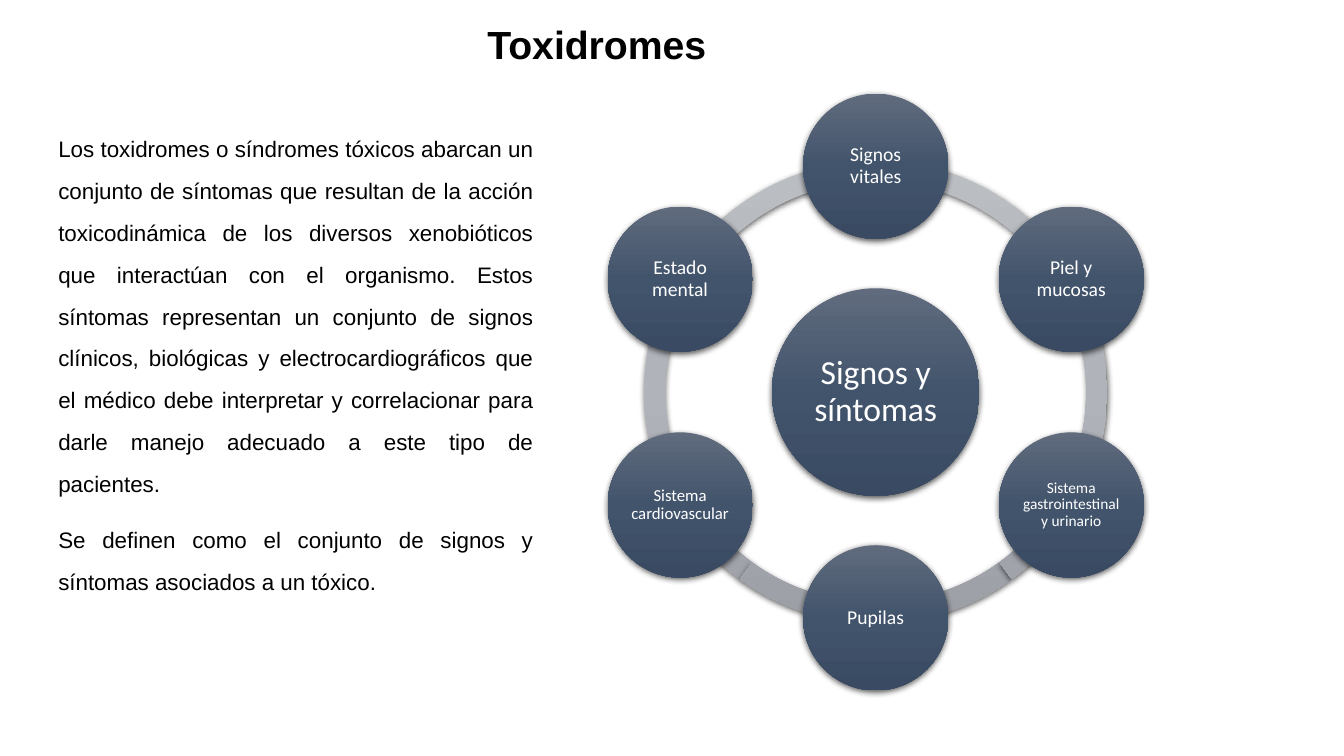
from math import cos, radians, sin

from lxml import etree
from pptx import Presentation
from pptx.dml.color import RGBColor
from pptx.enum.shapes import MSO_SHAPE
from pptx.enum.text import MSO_ANCHOR, PP_ALIGN
from pptx.oxml import parse_xml
from pptx.oxml.ns import nsdecls, qn
from pptx.util import Cm, Pt

CIRCLE, ARC = MSO_SHAPE.OVAL, MSO_SHAPE.BLOCK_ARC
CENTER, JUSTIFY = PP_ALIGN.CENTER, PP_ALIGN.JUSTIFY
TOP, MIDDLE = MSO_ANCHOR.TOP, MSO_ANCHOR.MIDDLE

TITLE = "Toxidromes"
BODY = [
    "Los toxidromes o síndromes tóxicos abarcan un conjunto de síntomas que "
    "resultan de la acción toxicodinámica de los diversos xenobióticos que "
    "interactúan con el organismo. Estos síntomas representan un conjunto de "
    "signos clínicos, biológicas y electrocardiográficos que el médico debe "
    "interpretar y correlacionar para darle manejo adecuado a este tipo de "
    "pacientes.",
    "Se definen como el conjunto de signos y síntomas asociados a un tóxico.",
]
HUB = ("Signos y síntomas", 24)
SIGNS = [  # clockwise from the top: label, text size
    ("Signos vitales", 14),
    ("Piel y mucosas", 14),
    ("Sistema gastrointestinal y urinario", 11),
    ("Pupilas", 14),
    ("Sistema cardiovascular", 12),
    ("Estado mental", 14),
]
ARCS = [(126, 162), (90, 126), (54, 90), (18, 54), (198, 18), (162, 198)]

RING_COLORS = ["BABDC2", "B0B3BA", "9C9FA6"]
CIRCLE_COLORS = ["606B7D", "42546C", "394A62"]
BLACK, WHITE = "000000", "FFFFFF"

# Centimetres
CENTER_X, CENTER_Y, ORBIT = 22.07, 9.88, 5.69
RING_SIZE, HUB_SIZE, SIGN_SIZE = 11.66, 5.23, 3.66
RING_THICKNESS = 0.045

TITLE_FONT = {"name": "Arial", "size": Pt(28), "bold": True}
BODY_FONT = {"name": "Arial", "size": Pt(16)}


def color(value):
    return RGBColor.from_string(value)


def write(shape, texts, font, font_color, align, anchor, spacing, gap=0):
    frame = shape.text_frame
    frame.word_wrap = True
    frame.vertical_anchor = anchor
    for index, text in enumerate(texts):
        para = frame.paragraphs[0] if index == 0 else frame.add_paragraph()
        para.alignment = align
        para.line_spacing = spacing
        para.space_before = Pt(gap if index else 0)
        span = para.add_run()
        span.text = text
        for name, value in font.items():
            setattr(span.font, name, value)
        span.font.color.rgb = color(font_color)


def add_text(page, bounds, *content):
    box = page.shapes.add_textbox(*map(Cm, bounds))
    write(box, *content)


def add_shaded(page, kind, x, y, size, colors):
    """Add a shape centred on x, y with a vertical gradient and a soft shadow."""
    shape = page.shapes.add_shape(
        kind, Cm(x - size / 2), Cm(y - size / 2), Cm(size), Cm(size))
    shape.line.fill.background()
    stops = "".join(
        f'<a:gs pos="{index * 50000}"><a:srgbClr val="{value}"/></a:gs>'
        for index, value in enumerate(colors))
    gradient = parse_xml(
        f'<a:gradFill {nsdecls("a")} rotWithShape="1"><a:gsLst>{stops}</a:gsLst>'
        '<a:lin ang="5400000" scaled="0"/></a:gradFill>')
    properties = shape.element.spPr
    properties.find(qn("a:prstGeom")).addnext(gradient)

    shape.shadow.inherit = False
    shadow = etree.SubElement(
        properties.find(qn("a:effectLst")), qn("a:outerShdw"),
        blurRad=str(Pt(4.5)), dist=str(Pt(1.5)), dir="5400000", rotWithShape="0")
    tint = etree.SubElement(shadow, qn("a:srgbClr"), val=BLACK)
    etree.SubElement(tint, qn("a:alpha"), val="63000")
    return shape


def add_circle(page, x, y, size, label, points, inset):
    circle = add_shaded(page, CIRCLE, x, y, size, CIRCLE_COLORS)
    for side in ("left", "top", "right", "bottom"):
        setattr(circle.text_frame, f"margin_{side}", Cm(inset))
    font = {"name": "Calibri", "size": Pt(points)}
    write(circle, [label], font, WHITE, CENTER, MIDDLE, 0.9)


def main():
    deck = Presentation()
    deck.slide_width, deck.slide_height = Cm(33.87), Cm(19.05)
    page = deck.slides.add_slide(deck.slide_layouts[6])

    add_text(page, (8.26, 0.3, 13.56, 1.75),
             [TITLE], TITLE_FONT, BLACK, CENTER, MIDDLE, 0.9)
    add_text(page, (1.22, 2.9, 12.47, 13.23),
             BODY, BODY_FONT, BLACK, JUSTIFY, TOP, 1.56, 10)

    for start, end in ARCS:
        arc = add_shaded(page, ARC, CENTER_X, CENTER_Y, RING_SIZE, RING_COLORS)
        # One degree is 60000 units, and an adjustment of 1 is 100000 units
        arc.adjustments[0] = start * 0.6
        arc.adjustments[1] = end * 0.6
        arc.adjustments[2] = RING_THICKNESS

    add_circle(page, CENTER_X, CENTER_Y, HUB_SIZE, *HUB, 0.08)
    for index, (label, points) in enumerate(SIGNS):
        angle = radians(index * 360 / len(SIGNS) - 90)
        add_circle(page, CENTER_X + ORBIT * cos(angle),
                   CENTER_Y + ORBIT * sin(angle), SIGN_SIZE, label, points, 0.05)

    deck.save("out.pptx")


if __name__ == "__main__":
    main()
